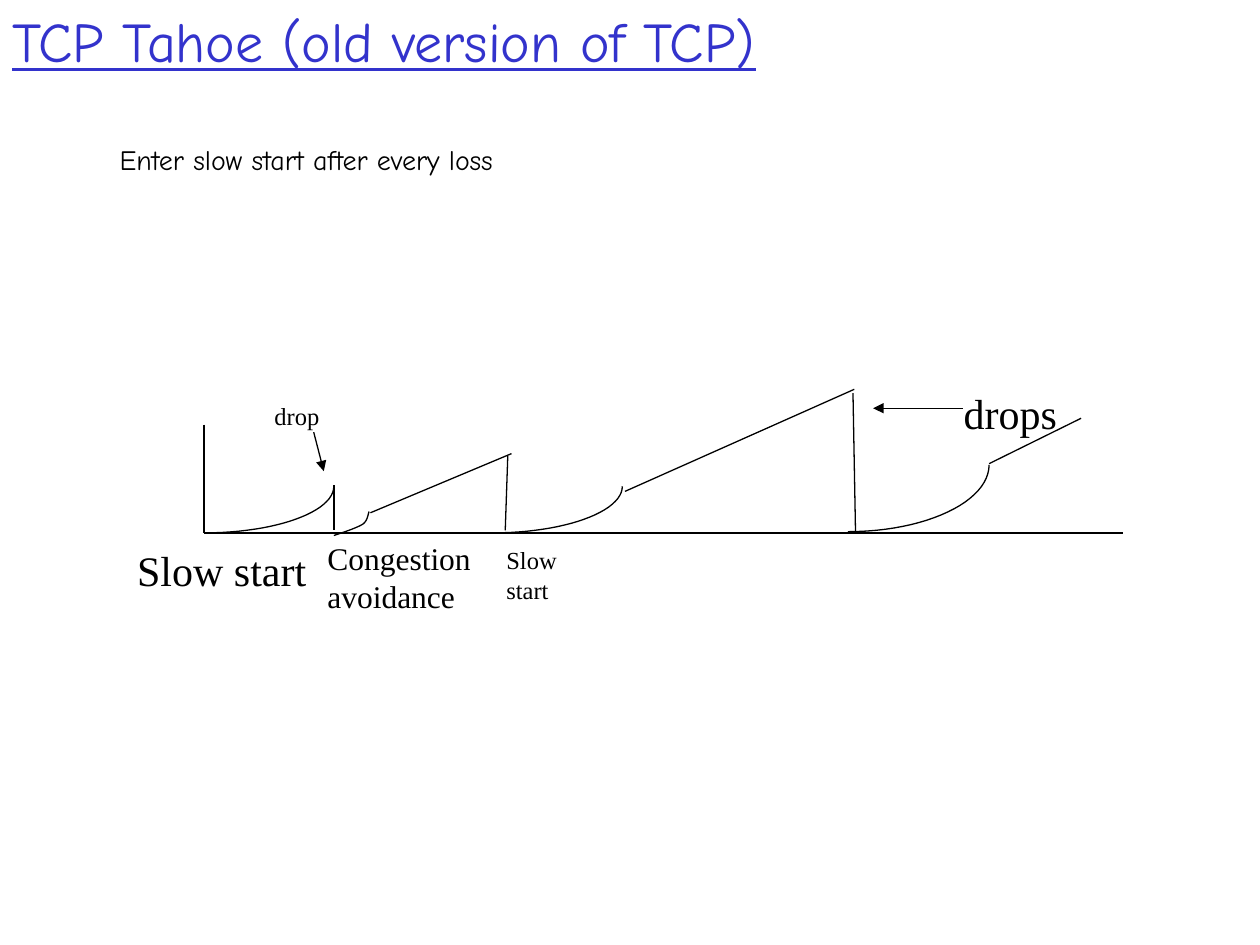
from lxml import etree
from pptx import Presentation
from pptx.dml.color import RGBColor
from pptx.enum import shapes, text
from pptx.oxml.ns import qn
from pptx.util import Inches, Pt

COLORS = {"title": "3333CC", "ink": "000000"}
HAND, SERIF = "Comic Neue", "Times New Roman"
BASE = 4.23


def bezier(start, first, second, end, steps=24):
    """Return points along a cubic curve, both ends included."""
    points = []
    for step in range(steps + 1):
        t = step / steps
        weights = ((1 - t) ** 3, 3 * t * (1 - t) ** 2, 3 * t * t * (1 - t), t ** 3)
        points.append(tuple(
            sum(w * p[axis] for w, p in zip(weights, (start, first, second, end)))
            for axis in (0, 1)))
    return points


def quarter(left, top, right, bottom):
    """Return a quarter ellipse rising from bottom left to top right."""
    pull = 0.55
    return bezier((left, bottom), (left + pull * (right - left), bottom),
                  (right, top + pull * (bottom - top)), (right, top))


def write(frame, content, size, font=SERIF, color="ink", underline=False):
    """Fill a text frame, one paragraph for each line of content."""
    for index, line in enumerate(content.split("\n")):
        paragraph = frame.add_paragraph() if index else frame.paragraphs[0]
        run = paragraph.add_run()
        run.text = line
        run.font.name = font
        run.font.size = Pt(size)
        run.font.underline = underline
        run.font.color.rgb = RGBColor.from_string(COLORS[color])


class Sketch:
    """Hold the line style and the slide being drawn."""

    def __init__(self, slide, width=0.75, color="ink"):
        self.slide = slide
        self.width = Pt(width)
        self.color = RGBColor.from_string(COLORS[color])

    def stroke(self, line):
        """Apply the common line style."""
        line.width = self.width
        line.color.rgb = self.color

    def title(self, content, left, top, width, height):
        """Add the underlined heading."""
        box = self.slide.shapes.add_textbox(*map(Inches, (left, top, width, height)))
        box.text_frame.word_wrap = True
        box.text_frame.vertical_anchor = text.MSO_ANCHOR.MIDDLE
        write(box.text_frame, content, 32, font=HAND, color="title", underline=True)

    def label(self, content, left, top, width, height, size, **style):
        """Add a label that grows with its text."""
        box = self.slide.shapes.add_textbox(*map(Inches, (left, top, width, height)))
        box.text_frame.word_wrap = False
        box.text_frame.auto_size = text.MSO_AUTO_SIZE.SHAPE_TO_FIT_TEXT
        write(box.text_frame, content, size, **style)

    def line(self, start, end, arrow=False):
        """Add a straight line, with an arrowhead at its end if asked."""
        connector = self.slide.shapes.add_connector(
            shapes.MSO_CONNECTOR.STRAIGHT, *map(Inches, start + end))
        self.stroke(connector.line)
        properties = connector._element.spPr
        if arrow:
            etree.SubElement(properties.find(qn("a:ln")), qn("a:tailEnd"), type="triangle")
        etree.SubElement(properties, qn("a:effectLst"))

    def curve(self, points):
        """Add an open, unfilled outline through the points."""
        outline = [tuple(map(Inches, point)) for point in points]
        builder = self.slide.shapes.build_freeform(*outline[0])
        builder.add_line_segments(outline[1:], close=False)
        shape = builder.convert_to_shape()
        shape.shadow.inherit = False
        shape.fill.background()
        self.stroke(shape.line)


def main():
    """Build the slide and save it."""
    deck = Presentation()
    deck.slide_width, deck.slide_height = Inches(10), Inches(7.5)
    sketch = Sketch(deck.slides.add_slide(deck.slide_layouts[6]))

    sketch.title("TCP Tahoe (old version of TCP)", 0, 0, 10.17, 0.64)
    sketch.label("Enter slow start after every loss", 0.85, 1.08, 3.62, 0.37, 16, font=HAND)

    axes = [((1.62, 3.37), (1.62, BASE)), ((1.62, BASE), (8.91, BASE))]
    avoidance = [((2.94, 4.07), (4.06, 3.6)), ((4.96, 3.9), (6.78, 3.09)),
                 ((7.85, 3.68), (8.58, 3.32))]
    losses = [((2.65, 3.85), (2.65, 4.21)), ((4.03, 3.62), (4.01, 4.21)),
              ((6.77, 3.12), (6.79, 4.22))]
    for start, end in axes + avoidance + losses:
        sketch.line(start, end)

    for slow_start in ((1.62, 3.86, 2.65, BASE), (3.91, 3.86, 4.94, BASE),
                       (6.73, 3.69, 7.85, 4.22)):
        sketch.curve(quarter(*slow_start))
    sketch.curve(bezier((2.65, 4.25), (2.74, 4.22), (2.83, 4.19), (2.88, 4.16))
                 + bezier((2.88, 4.16), (2.92, 4.13), (2.92, 4.08), (2.93, 4.06))[1:])

    for start, end in (((7.64, 3.24), (6.93, 3.24)), ((2.49, 3.43), (2.57, 3.74))):
        sketch.line(start, end, arrow=True)

    for caption in (("Slow start", 0.99, 4.27, 1.54, 0.5, 24),
                    ("Congestion\navoidance", 2.5, 4.23, 1.4, 0.7, 18),
                    ("Slow start", 3.92, 4.28, 0.98, 0.33, 14),
                    ("drop", 2.08, 3.13, 0.56, 0.33, 14),
                    ("drops", 7.55, 3.03, 0.94, 0.5, 24)):
        sketch.label(*caption)

    deck.save("out.pptx")


if __name__ == "__main__":
    main()
